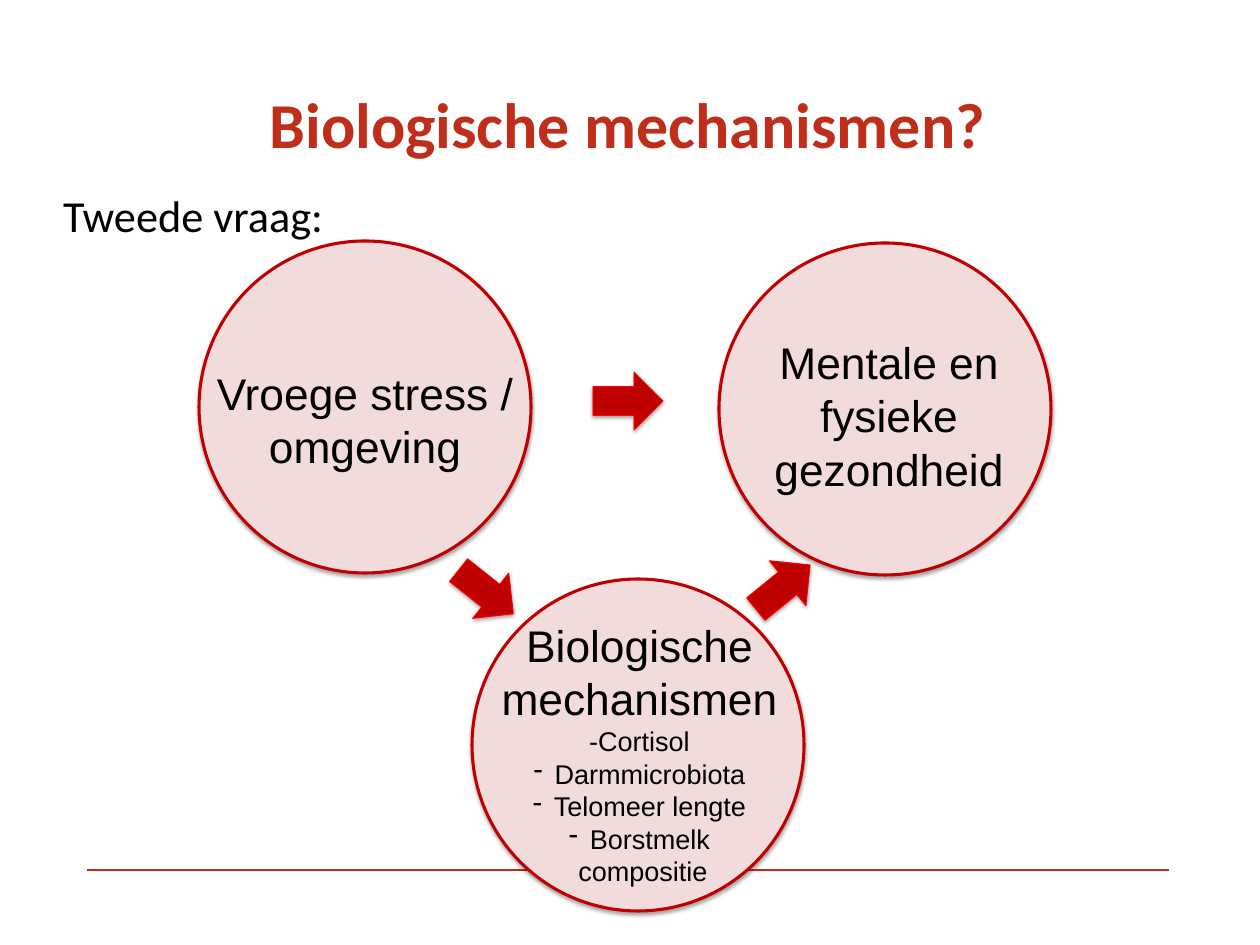
import pptx
import pptx.util
from lxml import etree
from pptx.dml.color import RGBColor
from pptx.enum.shapes import MSO_CONNECTOR, MSO_SHAPE
from pptx.enum.text import MSO_ANCHOR, MSO_AUTO_SIZE, PP_ALIGN
from pptx.oxml.ns import qn

EMU_PER_PX = 10320
TITLE_RED = RGBColor(0xBE, 0x2E, 0x1A)
DARK_RED = RGBColor(0xC0, 0x00, 0x00)
BRIGHT_RED = RGBColor(0xFF, 0x00, 0x00)
PINK = RGBColor(0xF2, 0xDC, 0xDB)
BLACK = RGBColor(0x00, 0x00, 0x00)

CIRCLE_SIZE = 332
ARROW_WIDTH, ARROW_HEIGHT = 70, 58
INSET = 4
LARGE, SMALL = 36, 22
BULLET_INDENT = 21


def px(value):
    return pptx.util.Emu(value * EMU_PER_PX)


def place(shape, left, top, width, height):
    shape.left, shape.top = px(left), px(top)
    shape.width, shape.height = px(width), px(height)


def format_paragraph(paragraph, size, font_name, color, alignment, bold=False):
    paragraph.alignment = alignment
    paragraph.space_before = pptx.util.Pt(0)
    for run in paragraph.runs:
        run.font.size = pptx.util.Pt(size)
        run.font.name = font_name
        run.font.bold = bold
        run.font.color.rgb = color


def indent_paragraph(paragraph, margin, bullet=None):
    properties = paragraph._p.get_or_add_pPr()
    properties.set("marL", str(px(margin)))
    if bullet:
        properties.set("indent", str(-px(margin)))
        etree.SubElement(properties, qn("a:buChar")).set("char", bullet)
    else:
        properties.set("indent", "0")
        etree.SubElement(properties, qn("a:buNone"))


def fill_placeholder(placeholder, text, box, anchor):
    place(placeholder, *box)
    frame = placeholder.text_frame
    frame.text = text
    frame.auto_size = MSO_AUTO_SIZE.NONE
    frame.vertical_anchor = anchor
    frame.margin_left = frame.margin_right = px(INSET)
    frame.margin_top = frame.margin_bottom = px(INSET)
    return frame.paragraphs[0]


def add_soft_shadow(shape):
    shape.shadow.inherit = False
    effects = shape._element.spPr.find(qn("a:effectLst"))
    shadow = etree.SubElement(effects, qn("a:outerShdw"), blurRad="40000",
                              dist="23000", dir="5400000", rotWithShape="0")
    color = etree.SubElement(shadow, qn("a:srgbClr"), val="000000")
    etree.SubElement(color, qn("a:alpha"), val="35000")


def add_red_shape(slide, kind, box, fill, line, line_width):
    shape = slide.shapes.add_shape(kind, *map(px, box))
    shape.fill.solid()
    shape.fill.fore_color.rgb = fill
    shape.line.color.rgb = line
    shape.line.width = pptx.util.Pt(line_width)
    add_soft_shadow(shape)
    return shape


def add_circle(slide, left, top):
    add_red_shape(slide, MSO_SHAPE.OVAL, (left, top, CIRCLE_SIZE, CIRCLE_SIZE),
                  PINK, DARK_RED, 2.5)


def add_arrow(slide, left, top, rotation):
    arrow = add_red_shape(slide, MSO_SHAPE.RIGHT_ARROW,
                          (left, top, ARROW_WIDTH, ARROW_HEIGHT),
                          DARK_RED, BRIGHT_RED, 0.75)
    arrow.rotation = rotation


def add_label(slide, box, lines):
    frame = slide.shapes.add_textbox(*map(px, box)).text_frame
    frame.word_wrap = True
    frame.auto_size = MSO_AUTO_SIZE.SHAPE_TO_FIT_TEXT
    frame.text = "\n".join(text for text, size, margin, bullet in lines)
    for paragraph, (text, size, margin, bullet) in zip(frame.paragraphs, lines):
        format_paragraph(paragraph, size, "Arial", BLACK, PP_ALIGN.CENTER)
        indent_paragraph(paragraph, margin, bullet)


def add_rule(slide, left, right, y):
    rule = slide.shapes.add_connector(MSO_CONNECTOR.STRAIGHT,
                                      px(left), px(y), px(right), px(y))
    rule.line.color.rgb = TITLE_RED
    rule.line.width = pptx.util.Pt(1.5)
    etree.SubElement(rule._element.spPr, qn("a:effectLst"))


def main():
    presentation = pptx.Presentation()
    presentation.slide_width, presentation.slide_height = px(1260), px(945)
    slide = presentation.slides.add_slide(presentation.slide_layouts[1])

    title = fill_placeholder(slide.shapes.title, "Biologische mechanismen?",
                             (87, 70, 1081, 105), MSO_ANCHOR.MIDDLE)
    format_paragraph(title, 52, "Calibri", TITLE_RED, PP_ALIGN.CENTER, bold=True)
    question = fill_placeholder(slide.placeholders[1], "Tweede vraag:",
                                (59, 184, 1081, 74), MSO_ANCHOR.TOP)
    format_paragraph(question, LARGE, "Calibri", BLACK, PP_ALIGN.LEFT)
    indent_paragraph(question, 0)

    add_rule(slide, 87, 1169, 870)
    for left, top in ((199, 241), (719, 243), (472, 579)):
        add_circle(slide, left, top)
    for left, top, rotation in ((593, 372, 0), (451, 563, 38.5), (748, 558, 320.9)):
        add_arrow(slide, left, top, rotation)

    add_label(slide, (199, 362, 332, 116),
              [("Vroege stress / omgeving", LARGE, 0, None)])
    add_label(slide, (757, 331, 264, 170),
              [("Mentale en fysieke gezondheid", LARGE, 0, None)])
    add_label(slide, (491, 614, 297, 280), [
        ("Biologische", LARGE, 0, None),
        ("mechanismen", LARGE, 0, None),
        ("-Cortisol", SMALL, 0, None),
        ("Darmmicrobiota", SMALL, BULLET_INDENT, "-"),
        ("Telomeer lengte", SMALL, BULLET_INDENT, "-"),
        ("Borstmelk", SMALL, BULLET_INDENT, "-"),
        ("compositie", SMALL, 7, None),
    ])
    presentation.save("out.pptx")


if __name__ == "__main__":
    main()
